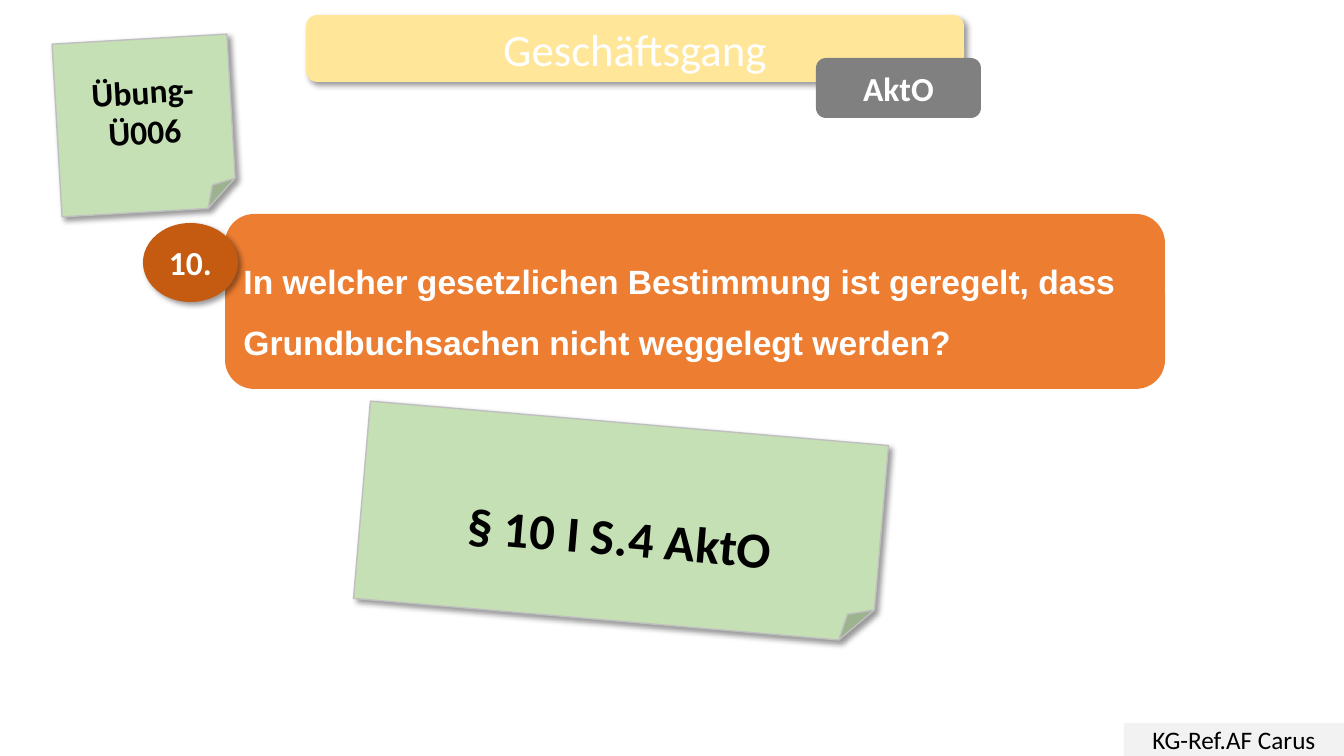
from lxml.etree import SubElement
from pptx import Presentation
from pptx.dml.color import RGBColor as Rgb
from pptx.enum.shapes import MSO_SHAPE as Kind
from pptx.enum.text import MSO_ANCHOR as Anchor, PP_ALIGN as Align
from pptx.oxml.ns import qn
from pptx.util import Pt

WHITE = Rgb(0xFF, 0xFF, 0xFF)
BLACK = Rgb(0, 0, 0)
PALE = Rgb(0xF2, 0xF2, 0xF2)
YELLOW = Rgb(0xFF, 0xE6, 0x99)
GREEN = Rgb(0xC5, 0xE0, 0xB4)
EDGE = Rgb(0xBF, 0xBF, 0xBF)
ORANGE = Rgb(0xED, 0x7D, 0x31)
RUST = Rgb(0xC5, 0x5A, 0x11)
GRAY = Rgb(0x80, 0x80, 0x80)

ROUND = Kind.ROUNDED_RECTANGLE
NOTE = Kind.FOLDED_CORNER
BALL = Kind.FLOWCHART_CONNECTOR
QUERY = ("In welcher gesetzlichen Bestimmung ist geregelt, "
         "dass Grundbuchsachen nicht weggelegt werden?")

# kind, box, fill, text, size, ink, bold, shadow, turn
PARTS = [
    (Kind.RECTANGLE, (1124, 723, 220, 33), PALE, "KG-Ref.AF Carus", 18, BLACK, False, False, 0),
    (ROUND, (306, 15, 658, 67), YELLOW, "Geschäftsgang", 32, WHITE, False, True, 0),
    (NOTE, (57, 39, 175, 173), GREEN, "Übung-\nÜ006", 24, BLACK, True, True, -3.3),
    (ROUND, (225, 214, 940, 175), ORANGE, QUERY, 24, WHITE, True, False, 0),
    (NOTE, (361, 423, 520, 198), GREEN, "§ 10 I S.4 AktO", 36, BLACK, True, True, 4.9),
    (BALL, (143, 223, 95, 79), RUST, "10.", 24, WHITE, True, True, 0),
    (ROUND, (816, 58, 165, 60), GRAY, "AktO", 24, WHITE, True, False, 0),
]


def px(n):
    return round(n * 914400 / 100.8)


def shade(shape):
    glow = shape._element.spPr.find(qn("a:effectLst"))
    outer = SubElement(glow, qn("a:outerShdw"), blurRad=str(Pt(4)), dist=str(Pt(3)),
                       dir="2700000", algn="tl", rotWithShape="0")
    tint = SubElement(outer, qn("a:srgbClr"), val="000000")
    SubElement(tint, qn("a:alpha"), val="40000")


def draw(slide, kind, box, fill, text, size, ink, bold, dark, turn):
    shape = slide.shapes.add_shape(kind, *map(px, box))
    shape.rotation = turn
    shape.fill.solid()
    shape.fill.fore_color.rgb = fill
    if kind == NOTE:
        shape.line.color.rgb = EDGE
        shape.line.width = Pt(1)
    else:
        shape.line.fill.background()
    shape.shadow.inherit = False
    if dark:
        shade(shape)
    frame = shape.text_frame
    frame.text = text
    frame.word_wrap = True
    frame.vertical_anchor = Anchor.MIDDLE
    for para in frame.paragraphs:
        para.alignment = Align.CENTER
        for run in para.runs:
            font = run.font
            font.name = "Arial" if text == QUERY else "Calibri"
            font.size = Pt(size)
            font.bold = bold
            font.color.rgb = ink
    return frame


def main():
    deck = Presentation()
    deck.slide_width, deck.slide_height = px(1344), px(756)
    slide = deck.slides.add_slide(deck.slide_layouts[6])
    frames = {part[3]: draw(slide, *part) for part in PARTS}
    query = frames[QUERY].paragraphs[0]
    query.alignment = Align.LEFT
    query.line_spacing = 1.5
    frames["§ 10 I S.4 AktO"].margin_top = px(66)
    deck.save("out.pptx")


if __name__ == "__main__":
    main()
